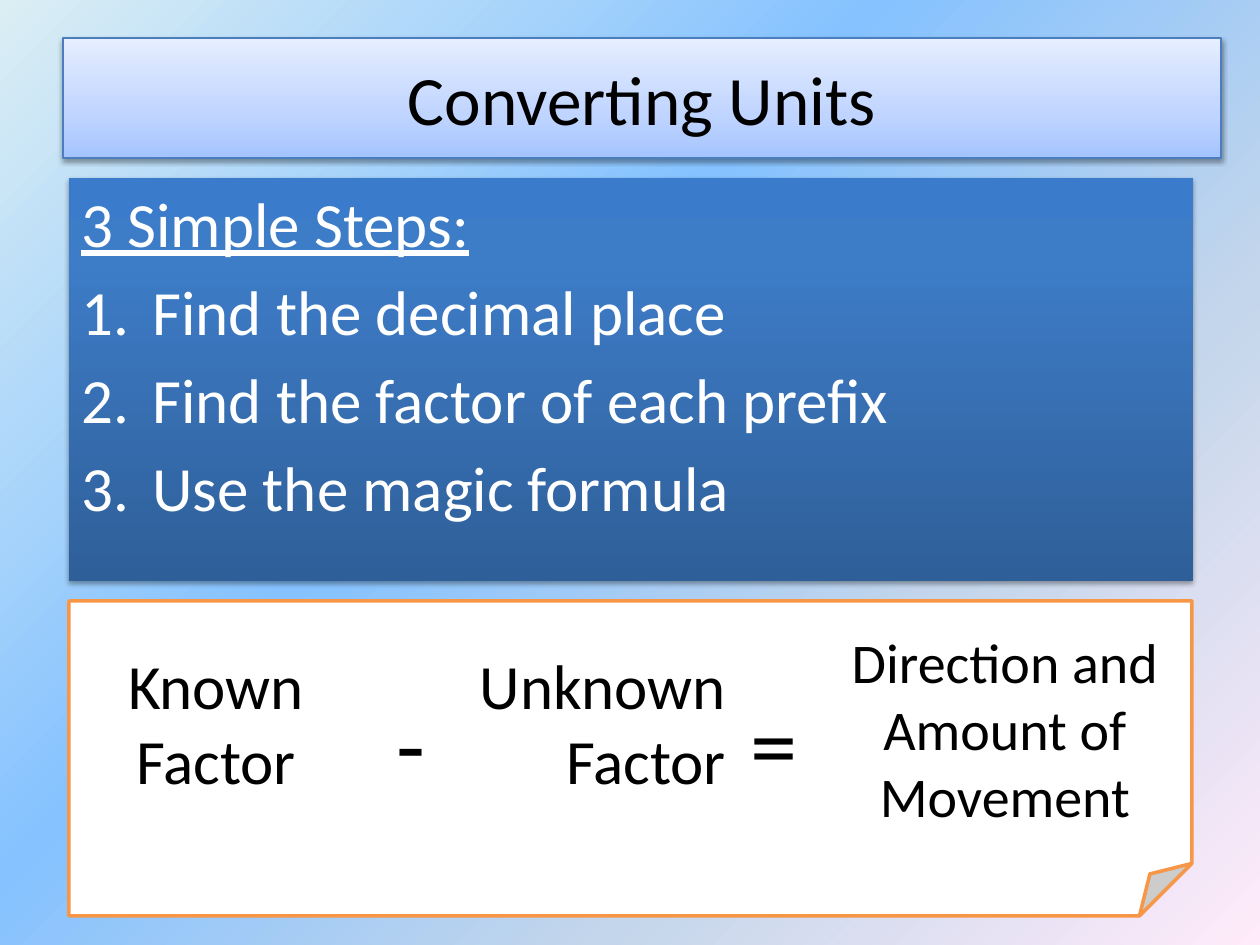
from lxml import etree
from pptx import Presentation
from pptx.dml.color import RGBColor
from pptx.enum.shapes import MSO_SHAPE as SHAPE
from pptx.enum.text import MSO_ANCHOR as ANCHOR, PP_ALIGN as ALIGN
from pptx.oxml.ns import qn
from pptx.util import Emu, Pt

FONT = "Calibri"
BLACK, WHITE = "000000", "FFFFFF"


def px(n):
    return Emu(round(n * 914400 / 126))


def rgb(value):
    return RGBColor.from_string(value)


def add_xml(parent, tag, **attrs):
    return etree.SubElement(parent, qn(tag), {k: str(v) for k, v in attrs.items()})


def set_gradient(owner, fill, stops, angle):
    fill.gradient()
    grad = owner.element.find(".//" + qn("a:gradFill"))
    for child in list(grad):
        grad.remove(child)
    stop_list = add_xml(grad, "a:gsLst")
    for pos, color in stops:
        stop = add_xml(stop_list, "a:gs", pos=pos * 1000)
        add_xml(stop, "a:srgbClr", val=color)
    add_xml(grad, "a:lin", ang=angle * 60000, scaled=0)


def set_shadow(shape, blur, dist, alpha):
    shape.shadow.inherit = False
    effects = shape.element.spPr.find(qn("a:effectLst"))
    shadow = add_xml(effects, "a:outerShdw", blurRad=Pt(blur), dist=Pt(dist),
                     dir=90 * 60000, rotWithShape=0)
    color = add_xml(shadow, "a:srgbClr", val=BLACK)
    add_xml(color, "a:alpha", val=alpha * 1000)


def format_text(p, size, color=BLACK, align=ALIGN.CENTER, underline=None):
    p.alignment = align
    for r in p.runs:
        r.font.name, r.font.size = FONT, Pt(size)
        r.font.color.rgb = rgb(color)
        r.font.underline = underline


def set_indent(p, indent, numbered):
    pPr = p._p.get_or_add_pPr()
    pPr.set("marL", str(px(indent)))
    pPr.set("indent", str(-px(indent)))
    if numbered:
        add_xml(pPr, "a:buFont", typeface="+mj-lt")
        add_xml(pPr, "a:buAutoNum", type="arabicPeriod")


def add_title(s, text):
    title = s.shapes.title
    title.left, title.top, title.width, title.height = map(px, (63, 38, 1158, 120))
    set_gradient(title, title.fill, [(0, "A4C4FF"), (35, "BFD4FF"), (100, "E6EEFF")], 270)
    title.line.color.rgb = rgb("4B7EBC")
    title.line.width = Pt(0.75)
    set_shadow(title, 3.1, 1.6, 38)
    tf = title.text_frame
    tf.text = text
    tf.vertical_anchor = ANCHOR.MIDDLE
    format_text(tf.paragraphs[0], 39.6)


def add_steps(s, heading, steps):
    panel = s.shapes.add_shape(SHAPE.RECTANGLE, px(69), px(178), px(1124), px(403))
    set_gradient(panel, panel.fill, [(0, "2F5F99"), (80, "3D7CC7"), (100, "3A7CCB")], 270)
    panel.line.fill.background()
    set_shadow(panel, 3.1, 1.8, 35)
    tf = panel.text_frame
    tf.word_wrap = True
    tf.vertical_anchor = ANCHOR.TOP
    for i, text in enumerate([heading] + steps):
        p = tf.paragraphs[0] if i == 0 else tf.add_paragraph()
        p.text = text
        p.space_before = Pt(7.2)
        format_text(p, 36, WHITE, ALIGN.LEFT, underline=i == 0)
        set_indent(p, 71 if i else 47, numbered=i > 0)


def add_note(s):
    note = s.shapes.add_shape(SHAPE.FOLDED_CORNER, px(69), px(601), px(1123), px(315))
    note.shadow.inherit = False
    note.fill.solid()
    note.fill.fore_color.rgb = rgb(WHITE)
    note.line.color.rgb = rgb("F79646")
    note.line.width = Pt(2)


def add_label(s, text, box, size, align=ALIGN.CENTER, wrap=True):
    tf = s.shapes.add_textbox(*map(px, box)).text_frame
    tf.word_wrap = wrap
    tf.text = text
    format_text(tf.paragraphs[0], size, align=align)
    return tf


def main():
    prs = Presentation()
    prs.slide_width, prs.slide_height = px(1260), px(945)
    s = prs.slides.add_slide(prs.slide_layouts[5])
    set_gradient(s, s.background.fill,
                 [(0, "DBEEF4"), (40, "85C2FF"), (70, "C4D6EB"), (100, "FFEBFA")], 45)

    # Title and steps
    add_title(s, "Converting Units")
    add_steps(s, "3 Simple Steps:", ["Find the decimal place",
                                     "Find the factor of each prefix",
                                     "Use the magic formula"])

    # Magic formula
    add_note(s)
    add_label(s, "Known Factor", (88, 640, 256, 165), 36)
    unknown = add_label(s, "Unknown Factor", (472, 640, 286, 165), 36, ALIGN.RIGHT)
    unknown.margin_left, unknown.margin_right = px(0), px(32)
    add_label(s, "-", (384, 679, 54, 127), 54, ALIGN.LEFT, wrap=False)
    add_label(s, "Direction and Amount of Movement", (828, 621, 354, 217), 32)
    add_label(s, "=", (738, 679, 73, 127), 54, ALIGN.LEFT, wrap=False)

    prs.save("out.pptx")


if __name__ == "__main__":
    main()
